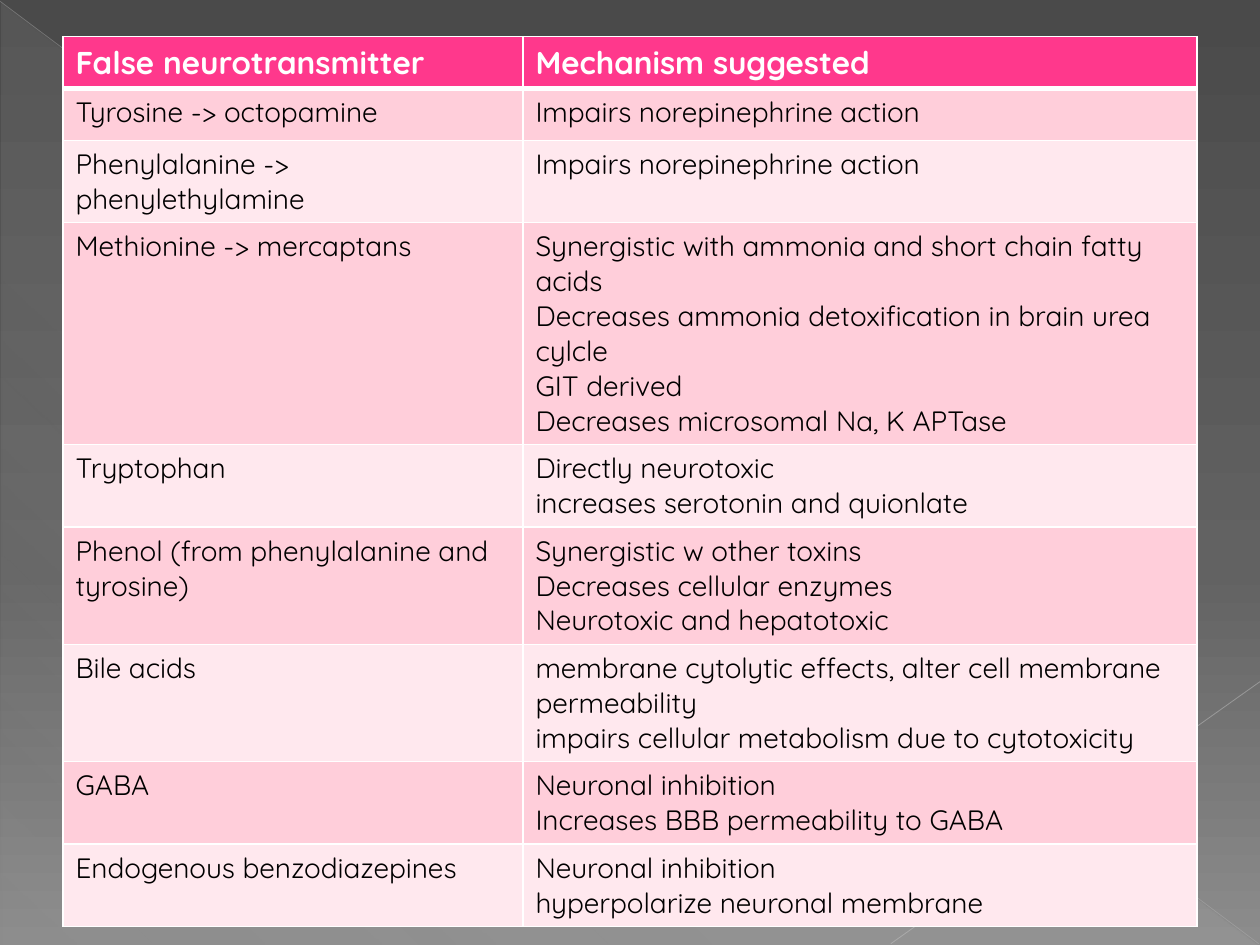
from typing import NamedTuple

from lxml import etree
from pptx import Presentation
from pptx.dml.color import RGBColor
from pptx.enum.shapes import MSO_CONNECTOR, MSO_SHAPE
from pptx.oxml.ns import qn
from pptx.util import Inches, Pt

STRAIGHT = MSO_CONNECTOR.STRAIGHT
RIGHT_TRIANGLE = MSO_SHAPE.RIGHT_TRIANGLE
BLANK_LAYOUT = 6
FONT = "Quicksand"
WHITE = "FFFFFF"
BAND_FILLS = ("FFCEDA", "FFE8EE")
COLUMN_WIDTHS = (3.65, 5.35)
ROW_HEIGHT = 0.41


class Stop(NamedTuple):
    position: int
    color: str
    opacity: int = 100


class Ray(NamedTuple):
    start: tuple[float, float]
    end: tuple[float, float]
    color: str
    width: float
    opacity: int


class Toxin(NamedTuple):
    name: str
    mechanisms: tuple[str, ...]


class RowStyle(NamedTuple):
    fill: str
    text_color: str
    size: int
    bold: bool
    top: float
    bottom: float


BACKDROP = (Stop(0, "4A4A4A"), Stop(60, "626262"), Stop(100, "8C8C8C"))
SHEEN = (Stop(0, "D2D2D2", 10), Stop(70, "D2D2D2", 8), Stop(100, "D2D2D2", 1))
RAYS = (
    Ray((0, 0.01), (9.99, 7.49), "BFBFBF", 0.39, 35),
    Ray((10, 5.41), (7.07, 7.49), "C6C6C6", 0.47, 45),
)
HEADING = Toxin("False neurotransmitter", ("Mechanism suggested",))
TOXINS = (
    Toxin("Tyrosine -> octopamine", ("Impairs norepinephrine action",)),
    Toxin("Phenylalanine -> phenylethylamine", ("Impairs norepinephrine action",)),
    Toxin("Methionine -> mercaptans", (
        "Synergistic with ammonia and short chain fatty acids",
        "Decreases ammonia detoxification in brain urea cylcle",
        "GIT derived",
        "Decreases microsomal Na, K APTase",
    )),
    Toxin("Tryptophan", ("Directly neurotoxic", "increases serotonin and quionlate")),
    Toxin("Phenol (from phenylalanine and tyrosine)", (
        "Synergistic w other toxins",
        "Decreases cellular enzymes",
        "Neurotoxic and hepatotoxic",
    )),
    Toxin("Bile acids", (
        "membrane cytolytic effects, alter cell membrane permeability",
        "impairs cellular metabolism due to cytotoxicity",
    )),
    Toxin("GABA", ("Neuronal inhibition", "Increases BBB permeability to GABA")),
    Toxin("Endogenous benzodiazepines", (
        "Neuronal inhibition",
        "hyperpolarize neuronal membrane",
    )),
)


def rgb(color: str) -> RGBColor:
    return RGBColor.from_string(color)


def add_color(parent, color: str, opacity: int = 100) -> None:
    srgb = etree.SubElement(parent, qn("a:srgbClr"), val=color)
    if opacity < 100:
        etree.SubElement(srgb, qn("a:alpha"), val=str(opacity * 1000))


def set_gradient(properties, stops: tuple[Stop, ...], angle: int) -> None:
    """Replace the solid fill of a properties element by a linear gradient."""
    gradient = etree.Element(qn("a:gradFill"), rotWithShape="1")
    stop_list = etree.SubElement(gradient, qn("a:gsLst"))
    for stop in stops:
        mark = etree.SubElement(stop_list, qn("a:gs"), pos=str(stop.position * 1000))
        add_color(mark, stop.color, stop.opacity)
    etree.SubElement(gradient, qn("a:lin"), ang=str(angle * 60000), scaled="0")
    properties.replace(properties.find(qn("a:solidFill")), gradient)


def draw_backdrop(slide) -> None:
    slide.background.fill.solid()
    set_gradient(slide.element.find(".//" + qn("p:bgPr")), BACKDROP, 90)
    sheen = slide.shapes.add_shape(
        RIGHT_TRIANGLE, Inches(0.01), Inches(0.02), Inches(9.98), Inches(7.48))
    sheen.shadow.inherit = False
    sheen.line.fill.background()
    sheen.fill.solid()
    set_gradient(sheen.element.spPr, SHEEN, 133)
    for ray in RAYS:
        draw_ray(slide, ray)


def draw_ray(slide, ray: Ray) -> None:
    connector = slide.shapes.add_connector(
        STRAIGHT, *(Inches(value) for value in ray.start + ray.end))
    connector.line.width = Pt(ray.width)
    connector.line.fill.solid()
    properties = connector.element.spPr
    solid = properties.find(".//" + qn("a:solidFill"))
    add_color(solid, ray.color, ray.opacity)
    etree.SubElement(properties, qn("a:effectLst"))


def set_borders(cell, widths: dict[str, float]) -> None:
    properties = cell._tc.get_or_add_tcPr()
    for index, (side, width) in enumerate(widths.items()):
        border = etree.Element(qn(f"a:{side}"), w=str(Pt(width)))
        add_color(etree.SubElement(border, qn("a:solidFill")), WHITE)
        properties.insert(index, border)


def fill_cell(cell, lines: tuple[str, ...], style: RowStyle) -> None:
    cell.fill.solid()
    cell.fill.fore_color.rgb = rgb(style.fill)
    set_borders(cell, {"lnL": 1, "lnR": 1, "lnT": style.top, "lnB": style.bottom})
    cell.text_frame.text = "\n".join(lines)
    formats = {"name": FONT, "size": Pt(style.size), "bold": style.bold}
    for paragraph in cell.text_frame.paragraphs:
        font = paragraph.runs[0].font
        for attribute, value in formats.items():
            setattr(font, attribute, value)
        font.color.rgb = rgb(style.text_color)


def row_style(index: int) -> RowStyle:
    if index == 0:
        return RowStyle("FF388C", WHITE, 18, True, 1, 3)
    top = 3 if index == 1 else 1
    return RowStyle(BAND_FILLS[(index - 1) % 2], "000000", 16, False, top, 1)


def draw_toxin_table(slide) -> None:
    rows = (HEADING, *TOXINS)
    table = slide.shapes.add_table(
        len(rows), len(COLUMN_WIDTHS), Inches(0.5), Inches(0.29),
        Inches(sum(COLUMN_WIDTHS)), Inches(ROW_HEIGHT * len(rows))).table
    for column, width in zip(table.columns, COLUMN_WIDTHS):
        column.width = Inches(width)
    for index, toxin in enumerate(rows):
        style = row_style(index)
        fill_cell(table.cell(index, 0), (toxin.name,), style)
        fill_cell(table.cell(index, 1), toxin.mechanisms, style)


def main() -> None:
    presentation = Presentation()
    presentation.slide_width = Inches(10)
    presentation.slide_height = Inches(7.5)
    slide = presentation.slides.add_slide(presentation.slide_layouts[BLANK_LAYOUT])
    draw_backdrop(slide)
    draw_toxin_table(slide)
    presentation.save("out.pptx")


if __name__ == "__main__":
    main()
